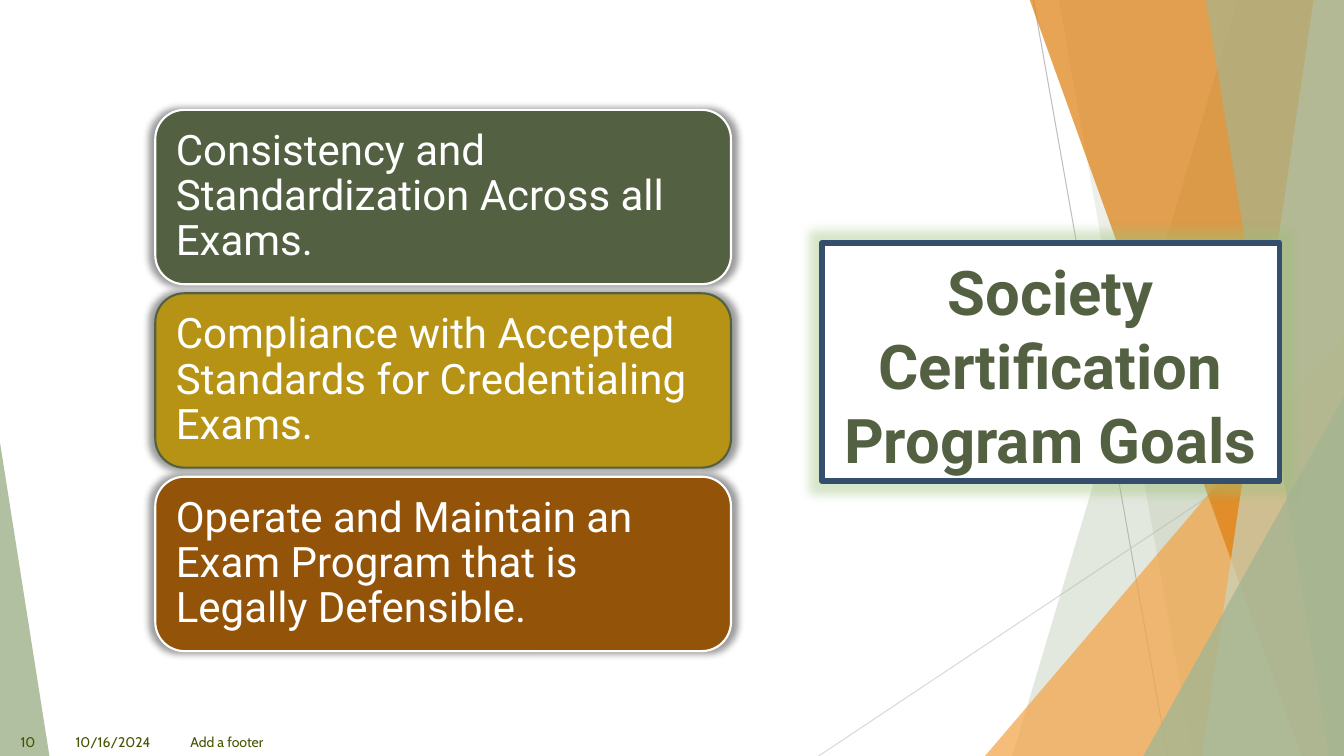
from dataclasses import dataclass

from lxml import etree
from pptx import Presentation
from pptx.dml.color import RGBColor
from pptx.enum.shapes import MSO_CONNECTOR, MSO_SHAPE
from pptx.enum.text import MSO_ANCHOR, MSO_AUTO_SIZE, PP_ALIGN
from pptx.oxml.ns import qn
from pptx.util import Inches, Pt

STRAIGHT = MSO_CONNECTOR.STRAIGHT
TRIANGLE, ROUNDED = MSO_SHAPE.ISOSCELES_TRIANGLE, MSO_SHAPE.ROUNDED_RECTANGLE
LEFT, CENTER, RIGHT = PP_ALIGN.LEFT, PP_ALIGN.CENTER, PP_ALIGN.RIGHT
MIDDLE, BOTTOM = MSO_ANCHOR.MIDDLE, MSO_ANCHOR.BOTTOM
NO_AUTOFIT = MSO_AUTO_SIZE.NONE

WHITE = RGBColor(0xFF, 0xFF, 0xFF)
BLACK = RGBColor(0x00, 0x00, 0x00)
GRAY = RGBColor(0xBF, 0xBF, 0xBF)
LIGHT_GRAY = RGBColor(0xD9, 0xD9, 0xD9)
SAGE = RGBColor(0xA5, 0xB5, 0x92)
PALE_SAGE = RGBColor(0xC9, 0xD3, 0xBE)
APRICOT = RGBColor(0xF3, 0xA4, 0x47)
ORANGE = RGBColor(0xDD, 0x7E, 0x0E)
MOSS = RGBColor(0x53, 0x61, 0x42)
GOLD = RGBColor(0xB7, 0x93, 0x15)
BROWN = RGBColor(0x93, 0x54, 0x0A)
NAVY = RGBColor(0x34, 0x4E, 0x6D)
OLIVE = RGBColor(0x45, 0x55, 0x00)
GLOW = RGBColor(0x9B, 0xC0, 0x78)

WIDTH, HEIGHT = 13.33, 7.5
BAND_TOP = -0.01
CARD_LEFT, CARD_TOP, CARD_WIDTH, CARD_HEIGHT, CARD_STEP = 1.54, 1.09, 5.71, 1.73, 1.82
FOOTER_TOP, FOOTER_HEIGHT = 7.25, 0.25


@dataclass
class Ray:
    x1: float
    y1: float
    x2: float
    y2: float
    color: RGBColor


@dataclass
class Band:
    """Runs from a slanted left edge to the right side of the slide."""
    top_x: float
    bottom_x: float
    color: RGBColor
    opacity: int


@dataclass
class Wedge:
    """Right triangle standing on the bottom of the slide."""
    left: float
    top: float
    width: float
    apex: int
    color: RGBColor
    opacity: int


@dataclass
class Card:
    text: str
    fill: RGBColor
    line: RGBColor


@dataclass
class FooterItem:
    text: str
    left: float
    width: float
    align: PP_ALIGN


RAYS = [
    Ray(10.25, 0, 11.58, HEIGHT, GRAY),
    Ray(WIDTH, 4.03, 8.12, HEIGHT, LIGHT_GRAY),
]
FACETS = [
    Band(12.28, 10.04, SAGE, 30),
    Band(10.5, 11.83, SAGE, 20),
    Wedge(9.77, 3.33, 3.56, 1, APRICOT, 72),
    Band(10.21, 12.91, ORANGE, 70),
    Band(13.03, 11.92, PALE_SAGE, 70),
    Band(11.96, 13.18, SAGE, 65),
    Wedge(11.34, 3.93, 1.99, 1, SAGE, 80),
    Wedge(0, 4.39, 0.49, 0, SAGE, 85),
]
CARDS = [
    Card("Consistency and Standardization Across all Exams.", MOSS, WHITE),
    Card("Compliance with Accepted Standards for Credentialing Exams.", GOLD, MOSS),
    Card("Operate and Maintain an Exam Program that is Legally Defensible.", BROWN, WHITE),
]
FOOTER = [
    FooterItem("10/16/2024", 0.5, 1.09, RIGHT),
    FooterItem("Add a footer", 1.79, 10, LEFT),
    FooterItem("10", 0, 0.45, RIGHT),
]


def add_effect(sp, kind: str, color: RGBColor, opacity: int, **attrs: str) -> None:
    sp.shadow.inherit = False
    effects = sp.element.spPr.find(qn("a:effectLst"))
    effect = etree.SubElement(effects, qn(f"a:{kind}"), attrs)
    clr = etree.SubElement(effect, qn("a:srgbClr"), val=str(color))
    etree.SubElement(clr, qn("a:alpha"), val=str(opacity * 1000))


def set_text(sp, text: str, font: str, size: int, color: RGBColor,
             align: PP_ALIGN, anchor: MSO_ANCHOR):
    tf = sp.text_frame
    tf.text = text
    tf.word_wrap = True
    tf.auto_size = NO_AUTOFIT
    tf.vertical_anchor = anchor
    p = tf.paragraphs[0]
    p.alignment = align
    p.font.name, p.font.size, p.font.color.rgb = font, Pt(size), color
    return p


def add_ray(slide, ray: Ray) -> None:
    line = slide.shapes.add_connector(
        STRAIGHT, Inches(ray.x1), Inches(ray.y1), Inches(ray.x2), Inches(ray.y2))
    line.line.color.rgb = ray.color
    line.line.width = Pt(0.75)
    etree.SubElement(line.element.spPr, qn("a:effectLst"))


def add_facet(slide, facet: Band | Wedge) -> None:
    if isinstance(facet, Band):
        builder = slide.shapes.build_freeform(Inches(facet.top_x), Inches(BAND_TOP))
        corners = [(WIDTH, BAND_TOP), (WIDTH, HEIGHT), (facet.bottom_x, HEIGHT)]
        builder.add_line_segments([(Inches(x), Inches(y)) for x, y in corners])
        sp = builder.convert_to_shape()
    else:
        sp = slide.shapes.add_shape(
            TRIANGLE, Inches(facet.left), Inches(facet.top),
            Inches(facet.width), Inches(HEIGHT - facet.top))
        sp.adjustments[0] = facet.apex
    sp.fill.solid()
    sp.fill.fore_color.rgb = facet.color
    sp.line.fill.background()
    sp.shadow.inherit = False
    clr = sp.element.spPr.find(qn("a:solidFill")).find(qn("a:srgbClr"))
    etree.SubElement(clr, qn("a:alpha"), val=str(facet.opacity * 1000))


def add_card(slide, card: Card, top: float) -> None:
    sp = slide.shapes.add_shape(
        ROUNDED, Inches(CARD_LEFT), Inches(top), Inches(CARD_WIDTH), Inches(CARD_HEIGHT))
    sp.fill.solid()
    sp.fill.fore_color.rgb = card.fill
    sp.line.color.rgb = card.line
    sp.line.width = Pt(1.5)
    add_effect(sp, "outerShdw", BLACK, 40, blurRad=str(Pt(5)),
               sx="102000", sy="102000", algn="ctr", rotWithShape="0")
    p = set_text(sp, card.text, "Roboto", 30, WHITE, LEFT, MIDDLE)
    p.line_spacing = 0.9
    tf = sp.text_frame
    tf.margin_left = tf.margin_right = tf.margin_top = tf.margin_bottom = Inches(0.12)


def add_title(slide) -> None:
    sp = slide.shapes.title
    slide.shapes.element.append(sp.element)  # in front of the facets
    sp.left, sp.top, sp.width, sp.height = (
        Inches(8.15), Inches(2.41), Inches(4.54), Inches(2.36))
    sp.fill.solid()
    sp.fill.fore_color.rgb = WHITE
    sp.line.color.rgb = NAVY
    sp.line.width = Pt(4)
    add_effect(sp, "glow", GLOW, 40, rad=str(Pt(14)))
    p = set_text(sp, "Society Certification Program Goals", "Roboto", 44, MOSS, CENTER, BOTTOM)
    p.font.bold = True


def add_footer_item(slide, item: FooterItem) -> None:
    sp = slide.shapes.add_textbox(
        Inches(item.left), Inches(FOOTER_TOP), Inches(item.width), Inches(FOOTER_HEIGHT))
    p = set_text(sp, item.text, "Cabin", 10, OLIVE, item.align, MIDDLE)
    p.line_spacing = 0.9
    p.space_after = Pt(6)


def main() -> None:
    prs = Presentation()
    prs.slide_width, prs.slide_height = Inches(WIDTH), Inches(HEIGHT)
    slide = prs.slides.add_slide(prs.slide_layouts[5])

    # Background rays and facets
    for ray in RAYS:
        add_ray(slide, ray)
    for facet in FACETS:
        add_facet(slide, facet)

    # Title and goal cards
    add_title(slide)
    for i, card in enumerate(CARDS):
        add_card(slide, card, CARD_TOP + i * CARD_STEP)

    # Footer
    for item in FOOTER:
        add_footer_item(slide, item)

    prs.save("out.pptx")


if __name__ == "__main__":
    main()
